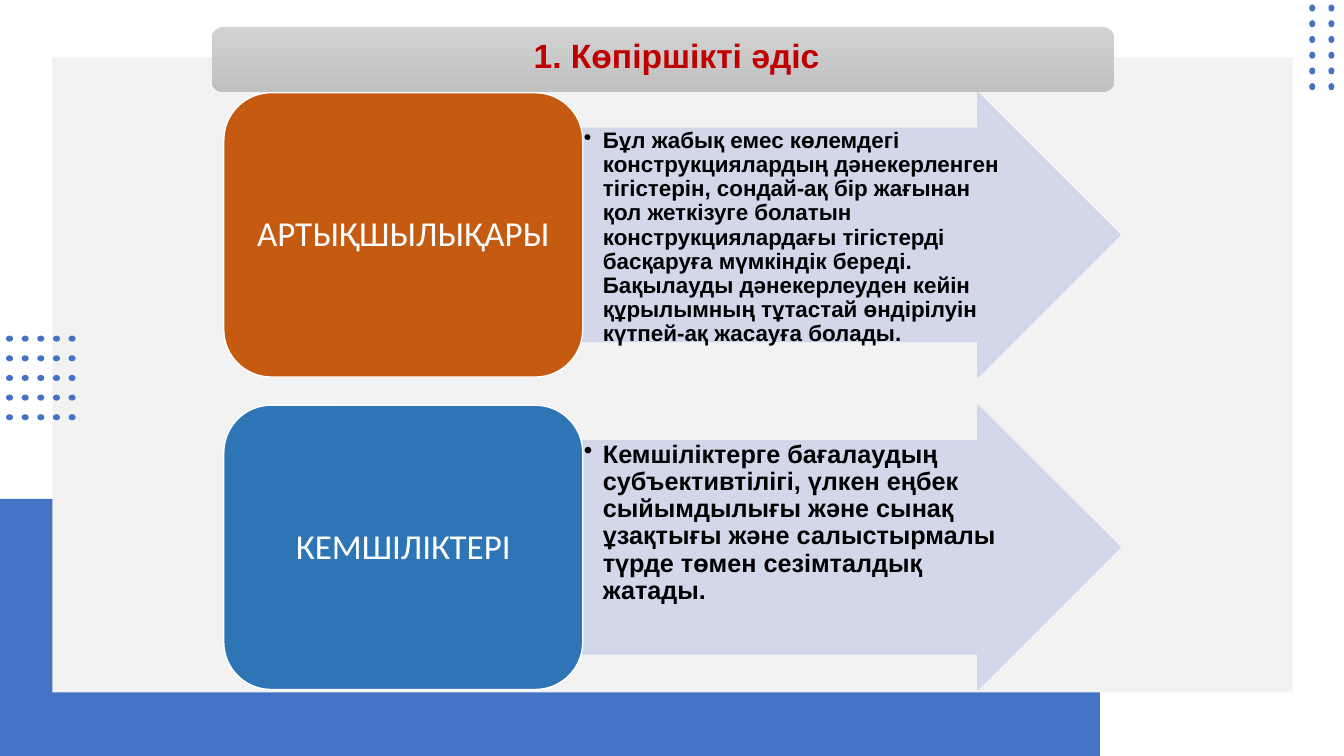
"""Build a slide on the pros and cons of the bubble method."""
from lxml import etree
from pptx import Presentation
from pptx import util as u
from pptx.dml.color import RGBColor
from pptx.enum import shapes, text
from pptx.oxml.ns import qn

HUES = {
    "blue": "4472C4", "panel": "F2F2F2", "light": "D2D2D2", "grey": "C0C0C0",
    "red": "C00000", "arrow": "CFD5EA", "orange": "C55A11", "sky": "2E75B6",
    "white": "FFFFFF", "black": "000000",
}
KIND = shapes.MSO_SHAPE
ROWS = [
    (0.92, "orange", "АРТЫҚШЫЛЫҚАРЫ", 16,
     "Бұл жабық емес көлемдегі конструкциялардың дәнекерленген тігістерін, "
     "сондай-ақ бір жағынан қол жеткізуге болатын конструкциялардағы тігістерді "
     "басқаруға мүмкіндік береді. Бақылауды дәнекерлеуден кейін құрылымның "
     "тұтастай өндірілуін күтпей-ақ жасауға болады."),
    (4.02, "sky", "КЕМШІЛІКТЕРІ", 18,
     "Кемшіліктерге бағалаудың субъективтілігі, үлкен еңбек сыйымдылығы және "
     "сынақ ұзақтығы және салыстырмалы түрде төмен сезімталдық жатады."),
]


def color(name):
    return RGBColor.from_string(HUES[name])


def write(frame, words, size, hue, font="Arial", bold=False, center=False,
          middle=False, inset=(0.1, 0.05), bullet=False):
    frame.word_wrap = True
    frame.auto_size = text.MSO_AUTO_SIZE.NONE
    frame.margin_left = frame.margin_right = u.Inches(inset[0])
    frame.margin_top = frame.margin_bottom = u.Inches(inset[1])
    anchor = text.MSO_ANCHOR
    frame.vertical_anchor = anchor.MIDDLE if middle else anchor.TOP
    para = frame.paragraphs[0]
    align = text.PP_ALIGN
    para.alignment = align.CENTER if center else align.LEFT
    para.line_spacing = 0.9
    if bullet:
        para.level = 1
        props = para._p.get_or_add_pPr()
        props.set("marL", str(u.Inches(0.19)))
        props.set("indent", str(u.Inches(-0.19)))
        etree.SubElement(props, qn("a:buChar")).set("char", "•")
    run = para.add_run()
    run.text = words
    run.font.name = font
    run.font.size = u.Pt(size)
    run.font.bold = bold
    run.font.color.rgb = color(hue)


class Deck:
    """Hold the show and its current slide."""

    def __init__(self):
        self.show = Presentation()
        self.show.slide_width = u.Inches(13.33)
        self.show.slide_height = u.Inches(7.5)
        self.slide = self.show.slides.add_slide(self.show.slide_layouts[5])

    def shape(self, kind, box, fill, line=None, group=None):
        host = group or self.slide
        item = host.shapes.add_shape(kind, *map(u.Inches, box))
        item.shadow.inherit = False
        item.fill.solid()
        item.fill.fore_color.rgb = color(fill)
        if line:
            item.line.color.rgb = color(line)
            item.line.width = u.Pt(1)
        else:
            item.line.fill.background()
        return item

    def dots(self, cols, rows, turn=0):
        group = self.slide.shapes.add_group_shape()
        xs, ys = ([first + i * (last - first) / (count - 1) for i in range(count)]
                  for first, last, count in (cols, rows))
        for x in xs:
            for y in ys:
                dot = self.shape(KIND.OVAL, (x, y, 0.07, 0.06), "blue", group=group)
                dot.rotation = turn

    def band(self, box):
        fill = self.shape(KIND.ROUNDED_RECTANGLE, box, "grey").fill
        fill.gradient()
        fill.gradient_angle = 270
        for stop, hue in zip(fill.gradient_stops, ("light", "grey")):
            stop.color.rgb = color(hue)

    def title(self, box, words):
        item = self.slide.shapes.title
        item.left, item.top, item.width, item.height = map(u.Inches, box)
        write(item.text_frame, words, 24, "red", bold=True, center=True, middle=True)
        self.slide.shapes._spTree.append(item._element)

    def label(self, box, words, size, hue, **form):
        item = self.slide.shapes.add_textbox(*map(u.Inches, box))
        write(item.text_frame, words, size, hue, **form)

    def arrow(self, box):
        item = self.shape(KIND.RIGHT_ARROW, box, "arrow", "arrow")
        item.adjustments[0] = 0.75
        item.adjustments[1] = 0.5
        for tint in item._element.spPr.iter(qn("a:srgbClr")):
            etree.SubElement(tint, qn("a:alpha")).set("val", "90000")

    def row(self, top, hue, name, size, words):
        self.arrow((5.78, top, 5.33, 2.82))
        self.label((5.78, top + 0.35, 4.28, 2.12), words, size, "black",
                   bold=True, inset=(0.01, 0.01), bullet=True)
        self.shape(KIND.ROUNDED_RECTANGLE, (2.22, top, 3.56, 2.82), hue, "white")
        self.label((2.36, top + 0.14, 3.28, 2.55), name, 25, "white",
                   font="Calibri", center=True, middle=True)


def main():
    deck = Deck()
    deck.shape(KIND.RECTANGLE, (0, 4.95, 10.91, 2.55), "blue")
    deck.shape(KIND.RECTANGLE, (0.52, 0.57, 12.3, 6.3), "panel")
    deck.dots((12.98, 13.17, 2), (0.05, 0.83, 6), turn=90)
    deck.dots((0.06, 0.68, 5), (3.33, 4.11, 5))
    deck.band((2.1, 0.27, 8.95, 0.64))
    deck.title((2.16, 0.03, 9.01, 1.09), " 1. Көпіршікті әдіс")
    for row in ROWS:
        deck.row(*row)
    deck.show.save("out.pptx")


if __name__ == "__main__":
    main()
